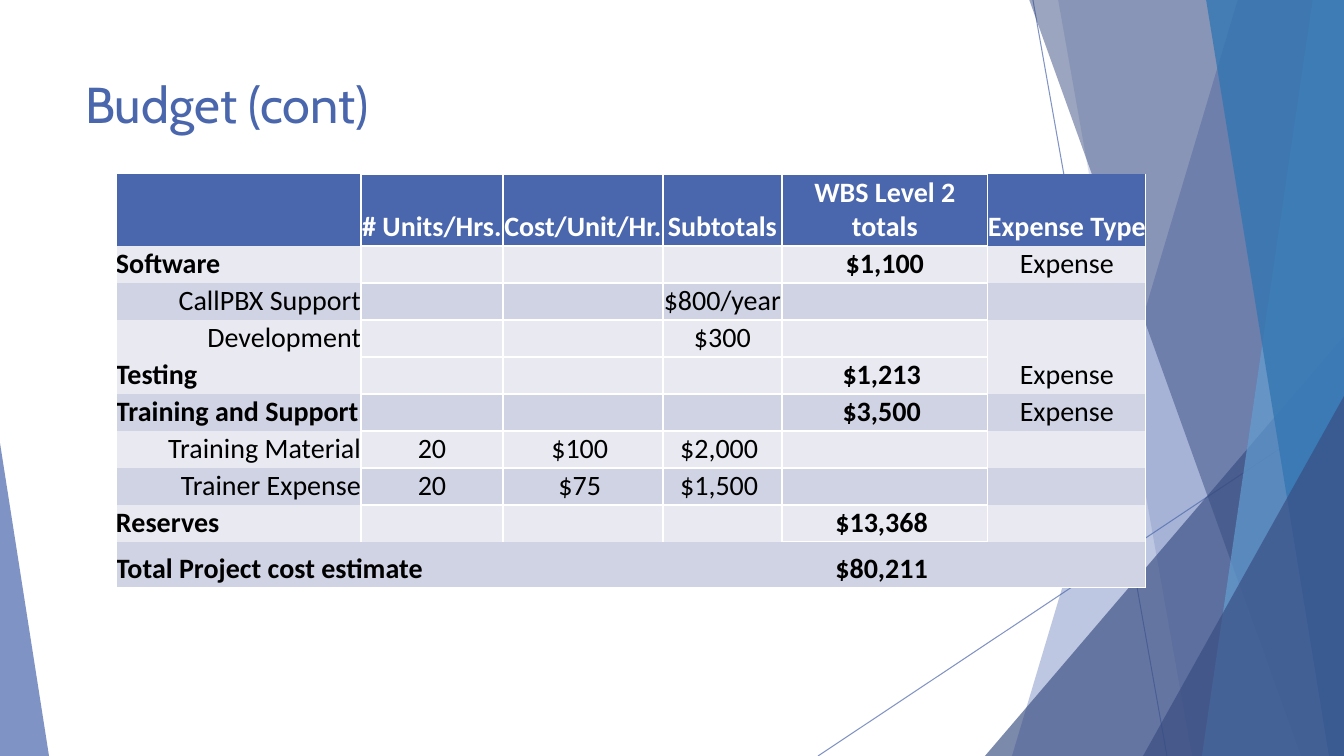
from lxml.etree import SubElement
from pptx import Presentation
from pptx.dml.color import RGBColor
from pptx.enum.shapes import MSO_CONNECTOR, MSO_SHAPE
from pptx.enum.text import MSO_ANCHOR, PP_ALIGN
from pptx.oxml.ns import qn
from pptx.util import Pt

PX = 914400 / 100.8
BLUE, NAVY, SKY, OCEAN = "4A66AC", "384C81", "629DD1", "3477B2"
LIGHT, DARK, WHITE, BLACK = "E9EAF1", "D0D3E3", "FFFFFF", "000000"


def px(n):
    return round(n * PX)


def paint(fill, color, alpha=100):
    fill.solid()
    fill.fore_color.rgb = RGBColor.from_string(color)
    if alpha < 100:
        clr = fill._xPr.find(".//" + qn("a:srgbClr"))
        SubElement(clr, qn("a:alpha"), val=str(alpha * 1000))


prs = Presentation()
prs.slide_width, prs.slide_height = px(1344), px(756)
s = prs.slides.add_slide(prs.slide_layouts[5])

# Thin background lines
for x1, y1, x2, y2 in [(1033, 0, 1167, 756), (1344, 406, 818, 756)]:
    line = s.shapes.add_connector(MSO_CONNECTOR.STRAIGHT, px(x1), px(y1), px(x2), px(y2))
    line.line.width = Pt(0.75)
    paint(line.line.fill, BLUE, 70)
    SubElement(line._element.spPr, qn("a:effectLst"))

# Facets: bands are (top x, bottom x) up to the right edge,
# triangles are (left, top, width, height, apex)
facets = [
    ((1238, 1012), BLUE, 36),
    ((1058, 1192), BLUE, 20),
    ((985, 336, 359, 420, 1), NAVY, 66),
    ((1029, 1301), NAVY, 50),
    ((1313, 1202), SKY, 70),
    ((1206, 1329), OCEAN, 80),
    ((1143, 396, 201, 360, 1), NAVY, 66),
    ((0, 443, 49, 313, 0), BLUE, 70),
]
for geometry, color, alpha in facets:
    if len(geometry) == 2:
        top, bottom = geometry
        outline = s.shapes.build_freeform(top, -1, scale=PX)
        outline.add_line_segments([(1344, -1), (1344, 756), (bottom, 756)])
        sp = outline.convert_to_shape()
    else:
        *box, apex = geometry
        sp = s.shapes.add_shape(MSO_SHAPE.ISOSCELES_TRIANGLE, *map(px, box))
        sp.adjustments[0] = apex
    sp.shadow.inherit = False
    sp.line.fill.background()
    paint(sp.fill, color, alpha)

# Title, in front of the facets
title = s.shapes.title
s.shapes._spTree.append(title._element)
title.left, title.top, title.width, title.height = px(75), px(68), px(948), px(145)
tf = title.text_frame
tf.text = "Budget (cont)"
tf.vertical_anchor = MSO_ANCHOR.TOP
p = tf.paragraphs[0]
p.alignment = PP_ALIGN.LEFT
r = p.runs[0]
r.font.size, r.font.name = Pt(36), "Cabin"
paint(r.font.fill, BLUE)

# Budget table
rows = [
    ("", "# Units/Hrs.", "Cost/Unit/Hr.", "Subtotals", "WBS Level 2 totals", "Expense Type"),
    ("Software", "", "", "", " $1,100 ", "Expense"),
    ("CallPBX Support", "", "", "$800/year", "", ""),
    ("Development", "", "", " $300 ", "", ""),
    ("Testing", "", "", "", "$1,213 ", "Expense"),
    ("Training and Support", "", "", "", "$3,500 ", "Expense"),
    ("Training Material", "20", "$100 ", "$2,000 ", "", ""),
    ("Trainer Expense", "20", "$75 ", "$1,500 ", "", ""),
    ("Reserves", "", "", "", "$13,368 ", ""),
    ("Total Project cost estimate", "", "", "", "$80,211 ", ""),
]
widths = [245, 142, 160, 119, 206, 158]
heights = [72] + [37] * 8 + [46]
fills = [BLUE, LIGHT, DARK, LIGHT, LIGHT, DARK, LIGHT, DARK, LIGHT, DARK]
total_edges = ["LB", "B", "B", "B", "TB", "RB"]
last = len(rows) - 1

frame = s.shapes.add_table(len(rows), len(widths), px(116), px(174),
                           px(sum(widths)), px(sum(heights)))
table = frame.table
for col, width in zip(table.columns, widths):
    col.width = px(width)
for row, height in zip(table.rows, heights):
    row.height = px(height)
table.cell(last, 0).merge(table.cell(last, 3))

for i, row in enumerate(rows):
    is_item = bool(row[3]) and i > 0
    for j, text in enumerate(row):
        cell = table.cell(i, j)
        cell.margin_left = cell.margin_right = cell.margin_top = 0
        cell.margin_bottom = px(2)
        cell.vertical_anchor = MSO_ANCHOR.BOTTOM

        # Side columns have no inner horizontal rules
        if i == last:
            edges = total_edges[j]
        elif j in (0, 5):
            edges = "LR"
        elif i == last - 1 and j < 4:
            edges = "LRT"
        else:
            edges = "LRTB"
        tcPr = cell._tc.get_or_add_tcPr()
        for side in "LRTB":
            ln = SubElement(tcPr, qn(f"a:ln{side}"), w=str(Pt(1)))
            if side in edges:
                SubElement(SubElement(ln, qn("a:solidFill")), qn("a:srgbClr"), val=WHITE)
            else:
                SubElement(ln, qn("a:noFill"))
        paint(cell.fill, fills[i])

        if text:
            cell.text_frame.text = text
            p = cell.text_frame.paragraphs[0]
            if j > 0:
                p.alignment = PP_ALIGN.CENTER
            else:
                p.alignment = PP_ALIGN.RIGHT if is_item else PP_ALIGN.LEFT
            font = p.runs[0].font
            font.size, font.name = Pt(20), "Calibri"
            font.bold = i == 0 or (not is_item and j < 5)
            paint(font.fill, WHITE if i == 0 else BLACK)

prs.save("out.pptx")
